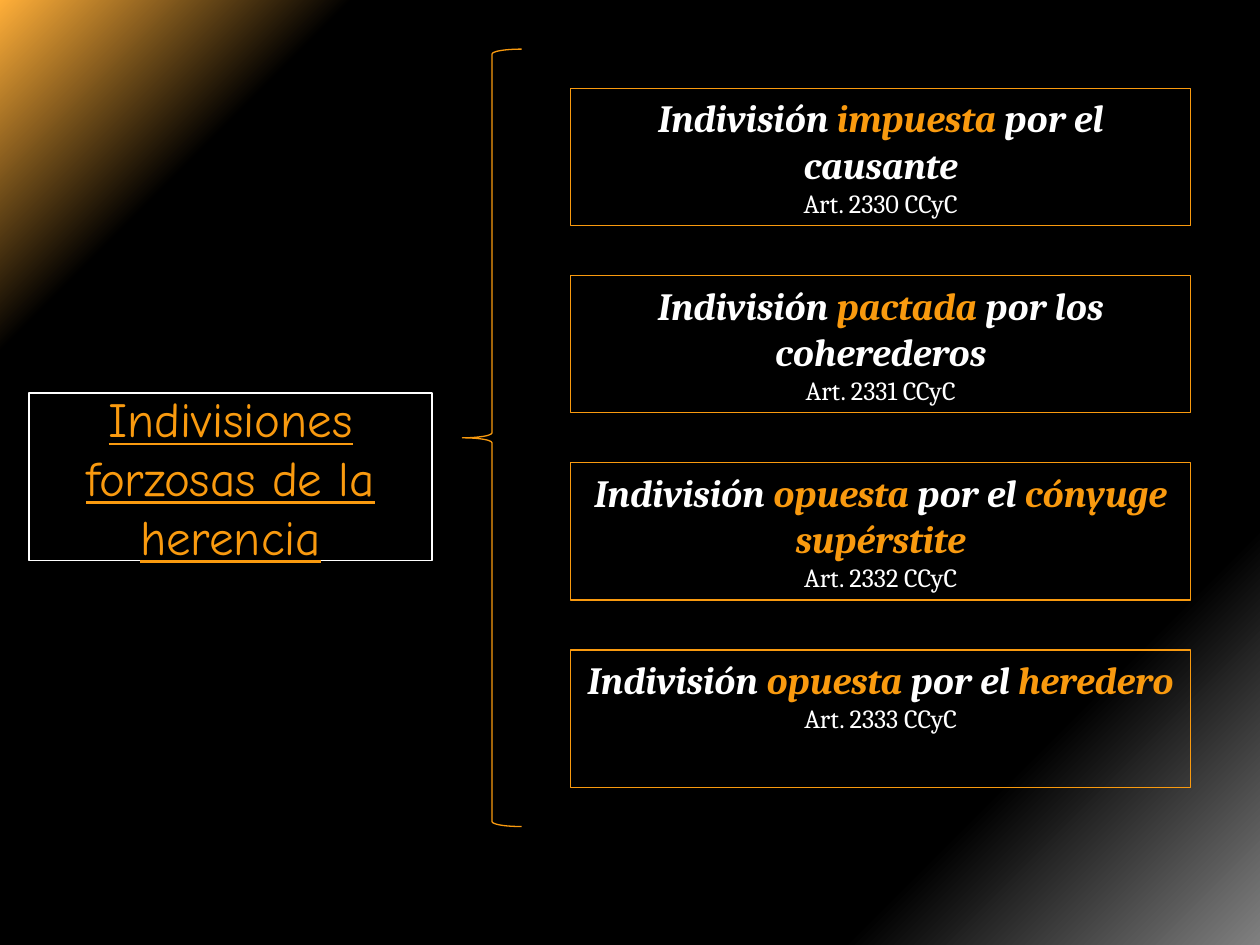
from lxml import etree
from pptx import Presentation
from pptx.dml.color import RGBColor
from pptx.enum import shapes, text
from pptx.oxml import ns
from pptx.util import Inches, Pt

HUE = {"gold": "F99A0F", "white": "FFFFFF", "glow": "FFAF39",
       "black": "000000", "gray": "808080"}
STOPS = [(0, "glow"), (16, "black"), (81, "black"), (100, "gray")]
HEAD = {"size": Pt(22), "name": "Cambria", "bold": True, "italic": True}
NOTE = {"size": Pt(15), "name": "Cambria", "bold": False, "italic": False}
NAME = {"size": Pt(28), "name": "Comic Neue", "underline": True}

# Words between asterisks are gold.
CASES = [
    ("Indivisión *impuesta* por el causante", "Art. 2330 CCyC"),
    ("Indivisión *pactada* por los coherederos", "Art. 2331 CCyC"),
    ("Indivisión *opuesta* por el *cónyuge supérstite*", "Art. 2332 CCyC"),
    ("Indivisión *opuesta* por el *heredero*", "Art. 2333 CCyC"),
]


def color(key):
    return RGBColor.from_string(HUE[key])


def paint(slide):
    """Fill the background with a diagonal gradient."""
    fill = slide.background.fill
    fill.gradient()
    grad = slide.element.find(".//" + ns.qn("a:gradFill"))
    stops = grad.find(ns.qn("a:gsLst"))
    for old in list(stops):
        stops.remove(old)
    for pos, key in STOPS:
        stop = etree.SubElement(stops, ns.qn("a:gs"), pos=str(pos * 1000))
        etree.SubElement(stop, ns.qn("a:srgbClr"), val=HUE[key])
    line = grad.find(ns.qn("a:lin"))
    line.set("ang", str(45 * 60000))
    line.set("scaled", "0")


def outline(shape, key):
    shape.fill.background()
    shape.line.color.rgb = color(key)
    shape.line.width = Pt(0.75)


def frame(shape, anchor):
    body = shape.text_frame
    body.word_wrap = True
    body.auto_size = text.MSO_AUTO_SIZE.NONE
    body.vertical_anchor = anchor
    return body


def write(para, words, form):
    para.alignment = text.PP_ALIGN.CENTER
    for num, part in enumerate(words.split("*")):
        if part:
            run = para.add_run()
            run.text = part
            for key, val in form.items():
                setattr(run.font, key, val)
            run.font.color.rgb = color("gold" if num % 2 else "white")


def add_shape(slide, kind, box):
    shape = slide.shapes.add_shape(kind, *map(Inches, box))
    shape.shadow.inherit = False
    outline(shape, "gold")
    return shape


def add_title(slide, box):
    title = slide.shapes.title
    title.left, title.top, title.width, title.height = map(Inches, box)
    outline(title, "white")
    body = frame(title, text.MSO_ANCHOR.MIDDLE)
    write(body.paragraphs[0], "*Indivisiones forzosas de la herencia*", NAME)


def add_cases(slide, box):
    """Stack one framed case after another, evenly spaced in the box."""
    left, top, width, height = box
    tall = 1.09
    step = (height - tall) / (len(CASES) - 1)
    for num, (head, note) in enumerate(CASES):
        card = add_shape(slide, shapes.MSO_SHAPE.RECTANGLE,
                         (left, top + num * step, width, tall))
        body = frame(card, text.MSO_ANCHOR.TOP)
        write(body.paragraphs[0], head, HEAD)
        write(body.add_paragraph(), note, NOTE)


def main():
    deck = Presentation()
    deck.slide_width, deck.slide_height = Inches(10), Inches(7.5)
    slide = deck.slides.add_slide(deck.slide_layouts[5])
    paint(slide)
    add_title(slide, (0.23, 3.12, 3.2, 1.33))
    add_cases(slide, (4.53, 0.7, 4.92, 5.55))
    add_shape(slide, shapes.MSO_SHAPE.LEFT_BRACE, (3.67, 0.39, 0.47, 6.17))
    deck.save("out.pptx")


if __name__ == "__main__":
    main()
